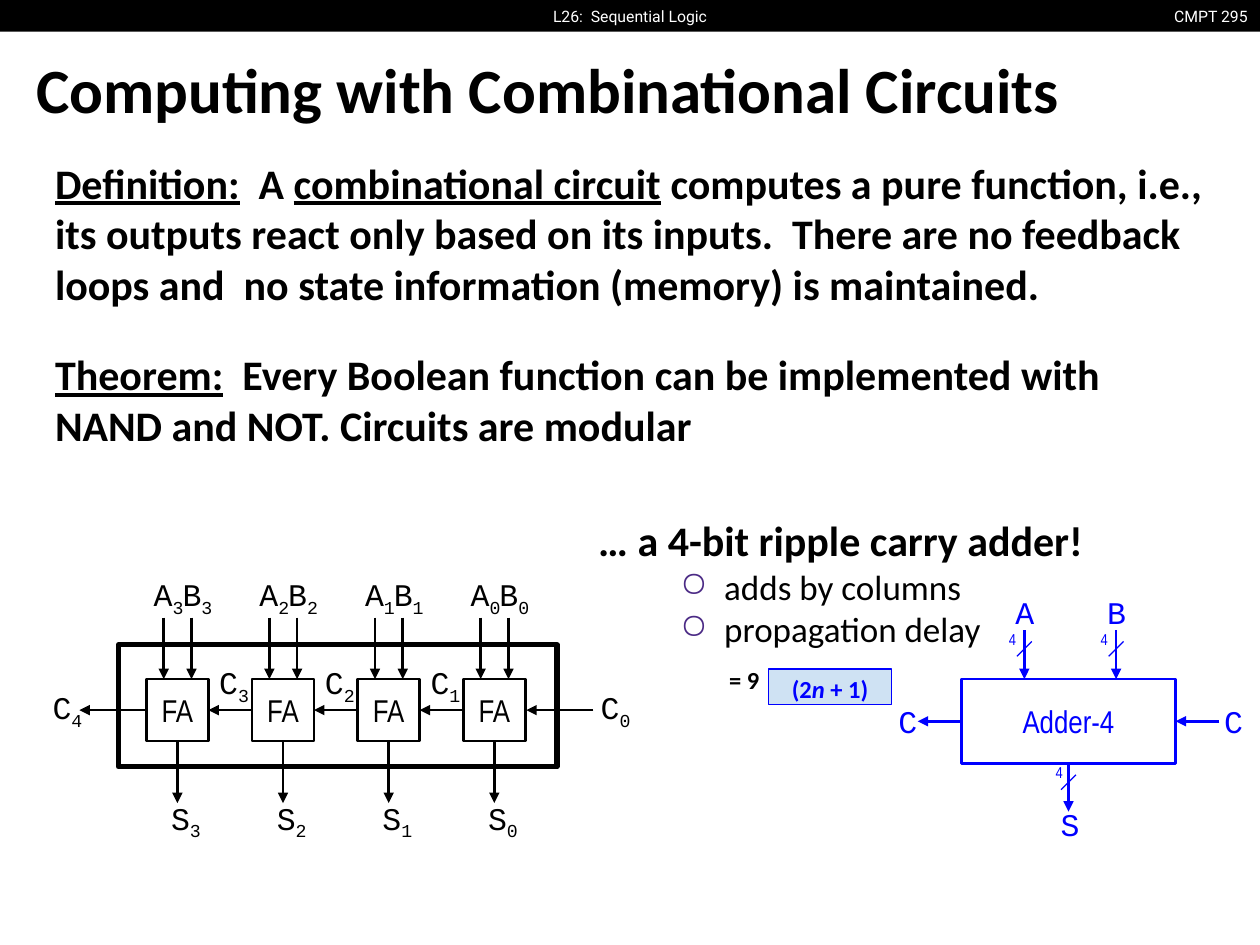
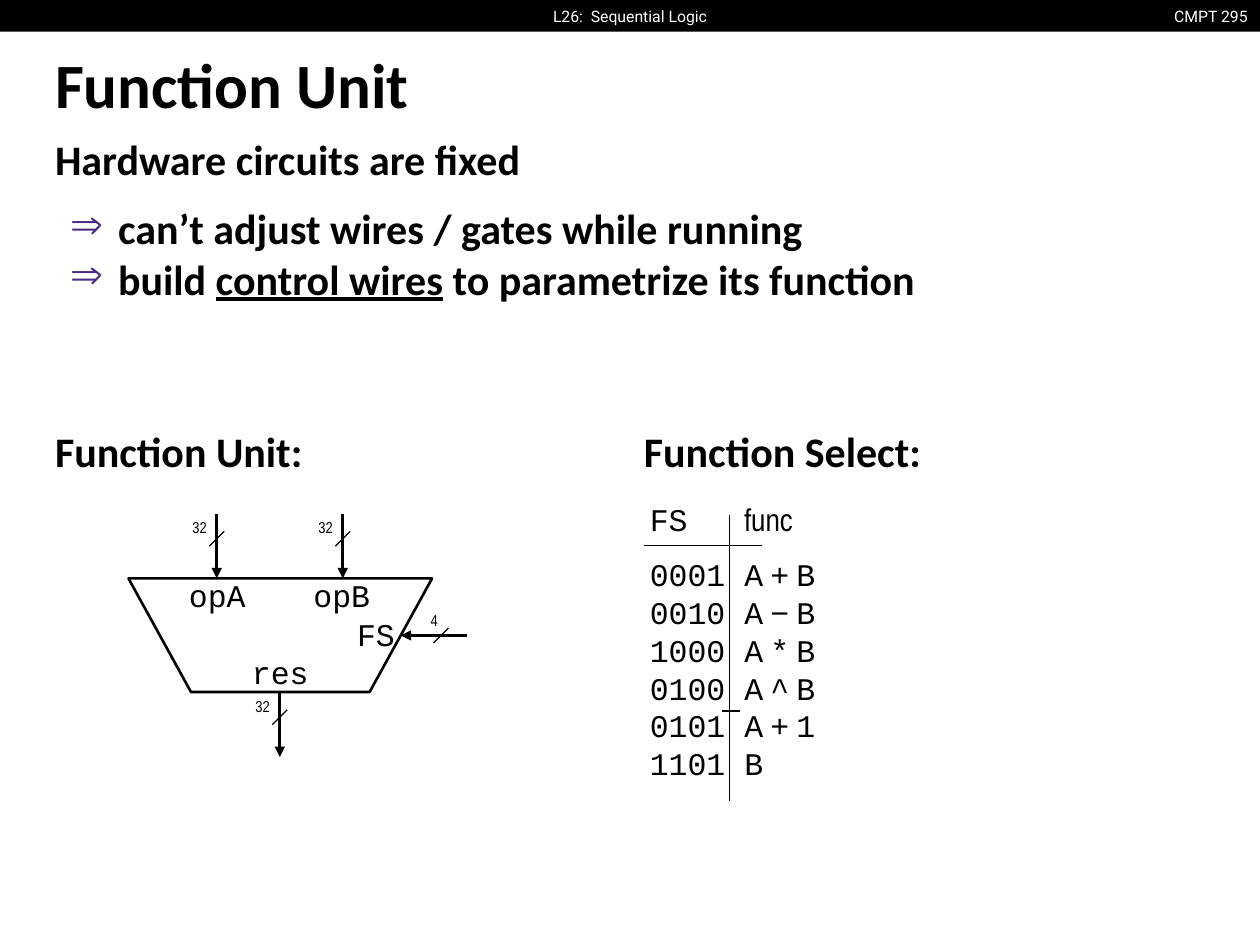
"""Build two lecture slides on combinational circuits and function units."""
from lxml import etree
from pptx import Presentation
from pptx.dml.color import RGBColor
from pptx.enum.shapes import MSO_CONNECTOR, MSO_SHAPE
from pptx.enum.text import MSO_ANCHOR, PP_ALIGN
from pptx.oxml.ns import qn
from pptx.util import Cm, Pt

LEFT, CENTER, RIGHT = PP_ALIGN.LEFT, PP_ALIGN.CENTER, PP_ALIGN.RIGHT
TOP, MIDDLE = MSO_ANCHOR.TOP, MSO_ANCHOR.MIDDLE
STRAIGHT = MSO_CONNECTOR.STRAIGHT
RECTANGLE, TRAPEZOID = MSO_SHAPE.RECTANGLE, MSO_SHAPE.TRAPEZOID

COLORS = {
    "ink": "000000",
    "paper": "FFFFFF",
    "blue": "0000FF",
    "pale": "CFE2F3",
    "bullet": "4B2A85",
}
SLIDE_WIDTH, SLIDE_HEIGHT, BAND_HEIGHT = 25.4, 19.05, 0.64
INSET = 0.25

HEADER = {"font": "Roboto", "size": 9, "color": "paper", "anchor": MIDDLE, "inset_y": 0}
TITLE = {"size": 36, "bold": True}
BODY = {"size": 24, "bold": True}
CODE = {"font": "Courier New", "size": 18}
NARROW = {"font": "Arial Narrow", "size": 18}
WIDTH_MARK = {"font": "Arial Narrow", "size": 9}
UNDERLINE = {"underline": True}

DEFINITION = [
    ("Definition:", UNDERLINE), "  A ", ("combinational circuit", UNDERLINE),
    " computes a pure function, i.e., its outputs react only based on its inputs."
    "  There are no feedback loops and  no state information (memory) is maintained.",
]
THEOREM = [
    ("Theorem:", UNDERLINE),
    "  Every Boolean function can be implemented with NAND and NOT. Circuits are modular",
]
ADDER_BULLET = {"size": 20, "bold": False, "bullet": "○", "indent": (2.54, -0.89)}
ADDER_NOTES = [
    ["… a 4-bit ripple carry adder!"],
    (["adds by columns"], ADDER_BULLET),
    (["propagation delay"], ADDER_BULLET),
]
DELAY_FORMULA = ["(2", ("n", {"italic": True}), " + 1)"]
CONTROL_POINTS = [
    ["can’t adjust wires / gates while running"],
    ["build ", ("control wires", UNDERLINE), " to parametrize its function"],
]
FUNCTIONS = [
    ("0001", "A + B"),
    ("0010", "A − B"),
    ("1000", "A * B"),
    ("0100", "A ^ B"),
    ("0101", "A + 1"),
    ("1101", "B"),
]
UNIT_PORTS = [("opA", 3.15, 11.43), ("opB", 5.66, 11.43), ("res", 4.42, 12.98), ("FS", 6.35, 12.22)]
SELECT_RULES = [
    ((12.98, 11), (15.37, 11)),
    ((14.71, 10.39), (14.71, 16.15)),
    ((14.55, 14.33), (14.91, 14.33)),
]


def color_of(name):
    return RGBColor.from_string(COLORS[name])


def format_paragraph(para, align=LEFT, before=0, after=0, spacing=1.0,
                     bullet=None, indent=None, tab=None):
    para.alignment = align
    para.space_before, para.space_after = Pt(before), Pt(after)
    para.line_spacing = spacing
    properties = para._p.get_or_add_pPr()
    if indent:
        properties.set("marL", str(Cm(indent[0])))
        properties.set("indent", str(Cm(indent[1])))
    if bullet:
        tint = etree.SubElement(properties, qn("a:buClr"))
        etree.SubElement(tint, qn("a:srgbClr"), val=COLORS["bullet"])
        etree.SubElement(properties, qn("a:buChar"), char=bullet)
    if tab:
        stops = etree.SubElement(properties, qn("a:tabLst"))
        etree.SubElement(stops, qn("a:tab"), pos=str(Cm(tab)), algn="l")


def format_span(span, font="Calibri", size=18, color="ink", bold=False,
                italic=False, underline=False, baseline=0):
    face = span.font
    face.name, face.size = font, Pt(size)
    face.bold, face.italic, face.underline = bold, italic, underline
    face.color.rgb = color_of(color)
    if baseline:
        span._r.get_or_add_rPr().set("baseline", str(baseline * 1000))


PARAGRAPH_KEYS = {"align", "before", "after", "spacing", "bullet", "indent", "tab"}


def write(shape, paragraphs, anchor=TOP, wrap=True, inset_y=INSET, **style):
    """Put paragraphs, given as lists of spans, into a shape."""
    frame = shape.text_frame
    frame.word_wrap, frame.vertical_anchor = wrap, anchor
    frame.margin_left = frame.margin_right = Cm(INSET)
    frame.margin_top = frame.margin_bottom = Cm(inset_y)
    if isinstance(paragraphs, str):
        paragraphs = [[paragraphs]]
    for index, entry in enumerate(paragraphs):
        spans, own = entry if isinstance(entry, tuple) else (entry, {})
        merged = {**style, **own}
        span_style = {key: value for key, value in merged.items() if key not in PARAGRAPH_KEYS}
        para = frame.add_paragraph() if index else frame.paragraphs[0]
        format_paragraph(para, **{key: merged[key] for key in merged if key in PARAGRAPH_KEYS})
        for part in spans:
            text, change = part if isinstance(part, tuple) else (part, {})
            span = para.add_run()
            span.text = text
            format_span(span, **{**span_style, **change})


def add_text(page, paragraphs, left, top, width=1.3, height=0.4, **style):
    box = page.shapes.add_textbox(Cm(left), Cm(top), Cm(width), Cm(height))
    write(box, paragraphs, **style)


def add_block(page, left, top, width, height, kind=RECTANGLE, fill=None, line=None, weight=1.5):
    block = page.shapes.add_shape(kind, Cm(left), Cm(top), Cm(width), Cm(height))
    block.shadow.inherit = False
    if fill:
        block.fill.solid()
        block.fill.fore_color.rgb = color_of(fill)
    else:
        block.fill.background()
    if line:
        block.line.color.rgb = color_of(line)
        block.line.width = Pt(weight)
    else:
        block.line.fill.background()
    return block


def add_line(page, start, end, color="ink", weight=0.75, arrow=False):
    ends = [Cm(value) for value in (*start, *end)]
    wire = page.shapes.add_connector(STRAIGHT, *ends)
    wire.line.color.rgb = color_of(color)
    wire.line.width = Pt(weight)
    if arrow:
        etree.SubElement(wire.line._get_or_add_ln(), qn("a:tailEnd"), type="triangle")
    etree.SubElement(wire._element.spPr, qn("a:effectLst"))


def add_arrow(page, start, end, color="ink"):
    add_line(page, start, end, color=color, weight=1.5, arrow=True)


def add_bus(page, bits, start, end, slash, mark, color="ink"):
    """Draw an arrow with a slash and its bit count, both placed relative to the start."""
    add_arrow(page, start, end, color)
    x, y = start[0] + slash[0], start[1] + slash[1]
    add_line(page, (x + 0.15, y - 0.15), (x - 0.15, y + 0.15), color)
    add_text(page, bits, start[0] + mark[0], start[1] + mark[1], height=1.3,
             color=color, **WIDTH_MARK)


def add_signal(page, name, number, left, top):
    add_text(page, [[name, (str(number), {"baseline": -25})]], left, top, **CODE)


def add_page(deck, title, left, top):
    page = deck.slides.add_slide(deck.slide_layouts[6])
    page.background.fill.solid()
    page.background.fill.fore_color.rgb = color_of("paper")
    add_block(page, 0, 0, SLIDE_WIDTH, BAND_HEIGHT, fill="ink")
    add_text(page, "CMPT 295", 23.34, 0, 2.06, BAND_HEIGHT, align=RIGHT, wrap=False, **HEADER)
    add_text(page, "L26:  Sequential Logic", 10.34, 0, 4.72, BAND_HEIGHT,
             align=CENTER, wrap=False, **HEADER)
    add_text(page, title, left, top, 23.67, 1.78, **TITLE)
    return page


def draw_ripple_adder(page, stages=4, first=2.95, top=13.69, side=1.25, pitch=2.13):
    middle, bottom = top + side / 2, top + side
    add_block(page, 2.39, 13, 8.84, 2.46, line="ink", weight=3)
    for stage in range(stages):
        left, number = first + stage * pitch, stages - 1 - stage
        adder = add_block(page, left, top, side, side, line="ink")
        write(adder, "FA", anchor=MIDDLE, align=CENTER, **NARROW)
        for name, wire, label in (("A", 0.35, -0.1), ("B", 0.91, 0.48)):
            add_arrow(page, (left + wire, top - 1.24), (left + wire, top))
            add_signal(page, name, number, left + label, 11.45)
        add_arrow(page, (left + side / 2, bottom), (left + side / 2, bottom + 1.25))
        add_signal(page, "S", number, left + 0.25, 15.95)
        carry_length = pitch - side if stage else 1.35
        add_arrow(page, (left, middle), (left - carry_length, middle))
        if number:
            add_signal(page, "C", number, left + 1.22, 13.21)
    add_arrow(page, (11.96, middle), (10.61, middle))
    add_signal(page, "C", 0, 11.86, 13.73)
    add_signal(page, "C", stages, 0.81, 13.73)


def draw_adder_symbol(page, left=19.38, top=13.69, width=4.32, height=1.7):
    center, middle, bottom = left + width / 2, top + height / 2, top + height
    right = left + width
    symbol = add_block(page, left, top, width, height, line="blue")
    write(symbol, "Adder-4", anchor=MIDDLE, align=CENTER, color="blue", **NARROW)
    for name, x in (("A", 20.65), ("B", 22.5)):
        add_bus(page, "4", (x, 12.7), (x, top), (0, 0.38), (-0.56, -0.2), "blue")
        add_text(page, name, x - 0.43, 11.81, color="blue", **CODE)
    add_bus(page, "4", (center, bottom), (center, 16.36), (0, 0.38), (-0.51, -0.2), "blue")
    add_text(page, "S", center - 0.41, 16.08, color="blue", **CODE)
    add_arrow(page, (right + 0.88, middle), (right, middle), "blue")
    add_arrow(page, (left, middle), (left - 0.88, middle), "blue")
    for x in (24.43, 17.86):
        add_text(page, "C", x, 14.33, anchor=MIDDLE, color="blue", **CODE)


def draw_function_unit(page):
    unit = add_block(page, 2.59, 11.66, 6.12, 2.29, kind=TRAPEZOID, line="ink")
    unit.adjustments[0] = 0.55
    unit.rotation = 180
    for x, y in ((4.37, 10.36), (6.91, 10.36), (5.64, 13.96)):
        add_bus(page, "32", (x, y), (x, y + 1.3), (0, 0.5), (-0.74, -0.11))
    add_bus(page, "4", (9.42, 12.81), (8.08, 12.81), (-0.53, 0), (-0.99, -0.69))
    for name, left, top in UNIT_PORTS:
        add_text(page, name, left, top, 2.46, 1.12, anchor=MIDDLE, align=CENTER, **CODE)


def draw_function_select(page):
    rows = [(["FS\t", ("func", NARROW)], {"tab": 1.9})]
    for index, (code, expression) in enumerate(FUNCTIONS):
        first, *others = expression.split()
        spans = [f"{code} {first}"]
        for token in others:
            spans += [(" ", NARROW), token]
        rows.append((spans, {"before": 0 if index else 10}))
    add_text(page, rows, 12.85, 9.83, 5.92, 0.97, **CODE)
    for start, end in SELECT_RULES:
        add_line(page, start, end)


def build_circuits(deck):
    page = add_page(deck, "Computing with Combinational Circuits", 0.48, 0.76)
    add_text(page, [DEFINITION], 0.86, 2.92, 23.72, 3.53, **BODY)
    add_text(page, [THEOREM], 0.86, 6.78, 23.67, 4.11, **BODY)
    draw_ripple_adder(page)
    add_text(page, ADDER_NOTES, 11.81, 10.13, 12.17, 4.11, **BODY)
    add_text(page, "= 9", 14.45, 13.06, 9.91, 1.24, size=14, bold=True, spacing=1.15)
    delay = add_block(page, 15.49, 13.49, 2.49, 0.71, fill="pale", line="blue", weight=0.75)
    write(delay, [DELAY_FORMULA], anchor=MIDDLE, align=CENTER, spacing=1.15,
          size=14, bold=True, color="blue")
    draw_adder_symbol(page)


def build_function_unit(deck):
    page = add_page(deck, "Function Unit", 0.86, 0.66)
    add_text(page, "Hardware circuits are fixed", 0.86, 2.44, 23.67, 1.4, **BODY)
    add_text(page, CONTROL_POINTS, 0.86, 3.84, 23.67, 4.11,
             bullet="⇒", indent=(1.27, -0.97), **BODY)
    for heading, left in (("Function Unit:", 0.86), ("Function Select:", 12.73)):
        add_text(page, heading, left, 8.33, 11.8, 1.68, **BODY)
    draw_function_unit(page)
    draw_function_select(page)


def main():
    deck = Presentation()
    deck.slide_width, deck.slide_height = Cm(SLIDE_WIDTH), Cm(SLIDE_HEIGHT)
    build_circuits(deck)
    build_function_unit(deck)
    deck.save("out.pptx")


if __name__ == "__main__":
    main()
